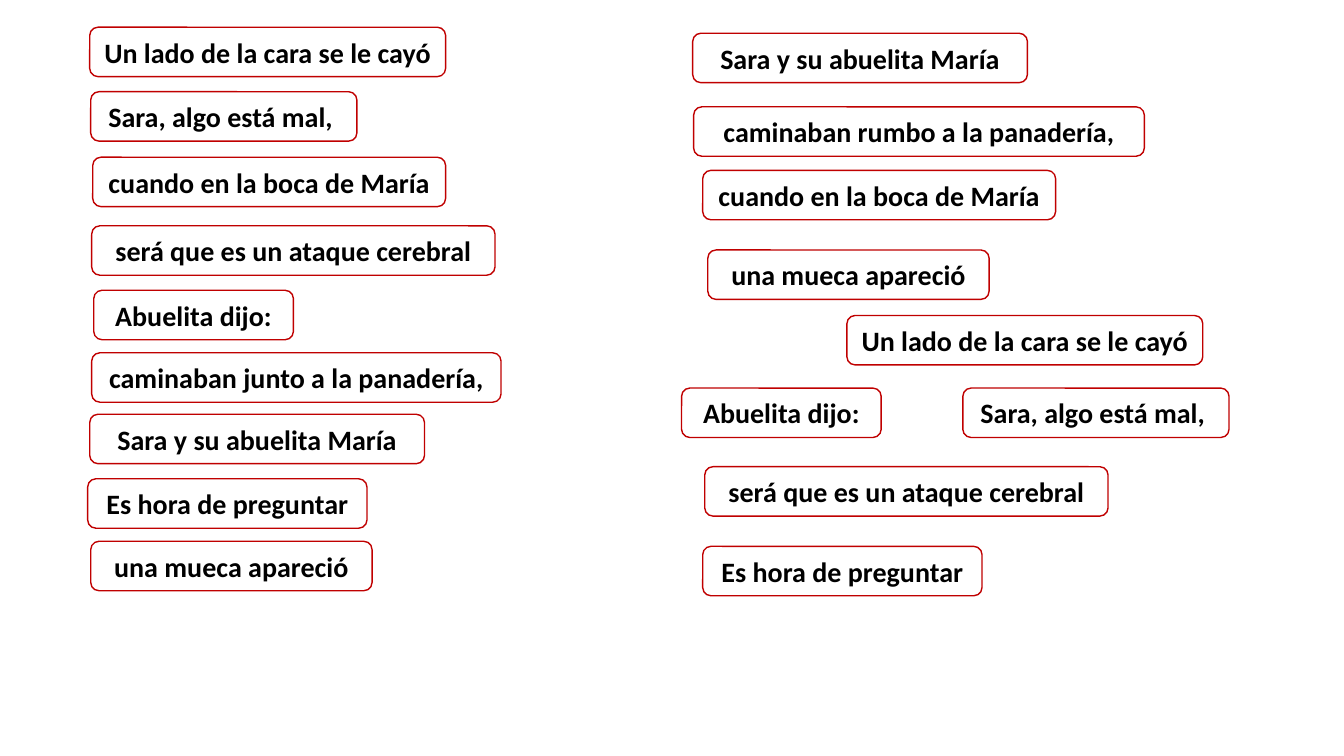
import pptx
import pptx.util
import pptx.dml.color
import pptx.enum.shapes
import pptx.enum.text
from dataclasses import dataclass


@dataclass(frozen=True)
class Theme:
    paper: str = "FFFFFF"
    border: str = "C00000"
    ink: str = "000000"
    font: str = "Calibri"
    verse_size: int = 20
    border_width: int = 1


theme = Theme()
inches = pptx.util.Inches
rgb = pptx.dml.color.RGBColor.from_string

CARD_HEIGHT = 0.49

# Each verse of the poem with the width of its card
verses = {
    "face": ("Un lado de la cara se le cayó ", 3.53),
    "wrong": ("Sara, algo está mal, ", 2.64),
    "mouth": ("cuando en la boca de María", 3.5),
    "stroke": ("será que es un ataque cerebral", 4),
    "said": ("Abuelita dijo:", 1.98),
    "walk_beside": ("caminaban junto a la panadería,", 4.06),
    "walk_towards": ("caminaban rumbo a la panadería,", 4.47),
    "sara": ("Sara y su abuelita María", 3.32),
    "ask": ("Es hora de preguntar", 2.77),
    "grimace": ("una mueca apareció", 2.79),
}

# Left and top of every card
shuffled_poem = [
    ("face", 0.89, 0.27),
    ("wrong", 0.9, 0.91),
    ("mouth", 0.92, 1.56),
    ("stroke", 0.91, 2.24),
    ("said", 0.93, 2.88),
    ("walk_beside", 0.91, 3.5),
    ("sara", 0.89, 4.11),
    ("ask", 0.87, 4.75),
    ("grimace", 0.9, 5.37),
]
ordered_poem = [
    ("sara", 6.87, 0.33),
    ("walk_towards", 6.88, 1.06),
    ("mouth", 6.97, 1.69),
    ("grimace", 7.02, 2.48),
    ("face", 8.4, 3.13),
    ("said", 6.76, 3.85),
    ("wrong", 9.55, 3.85),
    ("stroke", 6.99, 4.63),
    ("ask", 6.97, 5.42),
]

deck = pptx.Presentation()
deck.slide_width = inches(13.33)
deck.slide_height = inches(7.5)
slide = deck.slides.add_slide(deck.slide_layouts.get_by_name("Blank"))

for verse, left, top in shuffled_poem + ordered_poem:
    wording, width = verses[verse]
    card = slide.shapes.add_shape(
        pptx.enum.shapes.MSO_SHAPE.ROUNDED_RECTANGLE,
        inches(left), inches(top), inches(width), inches(CARD_HEIGHT),
    )
    card.shadow.inherit = False
    card.fill.solid()
    card.fill.fore_color.rgb = rgb(theme.paper)
    card.line.color.rgb = rgb(theme.border)
    card.line.width = pptx.util.Pt(theme.border_width)

    card.text_frame.word_wrap = True
    card.text_frame.vertical_anchor = pptx.enum.text.MSO_ANCHOR.MIDDLE
    line = card.text_frame.paragraphs[0]
    line.alignment = pptx.enum.text.PP_ALIGN.CENTER
    words = line.add_run()
    words.text = wording
    words.font.name = theme.font
    words.font.size = pptx.util.Pt(theme.verse_size)
    words.font.bold = True
    words.font.color.rgb = rgb(theme.ink)

deck.save("out.pptx")
